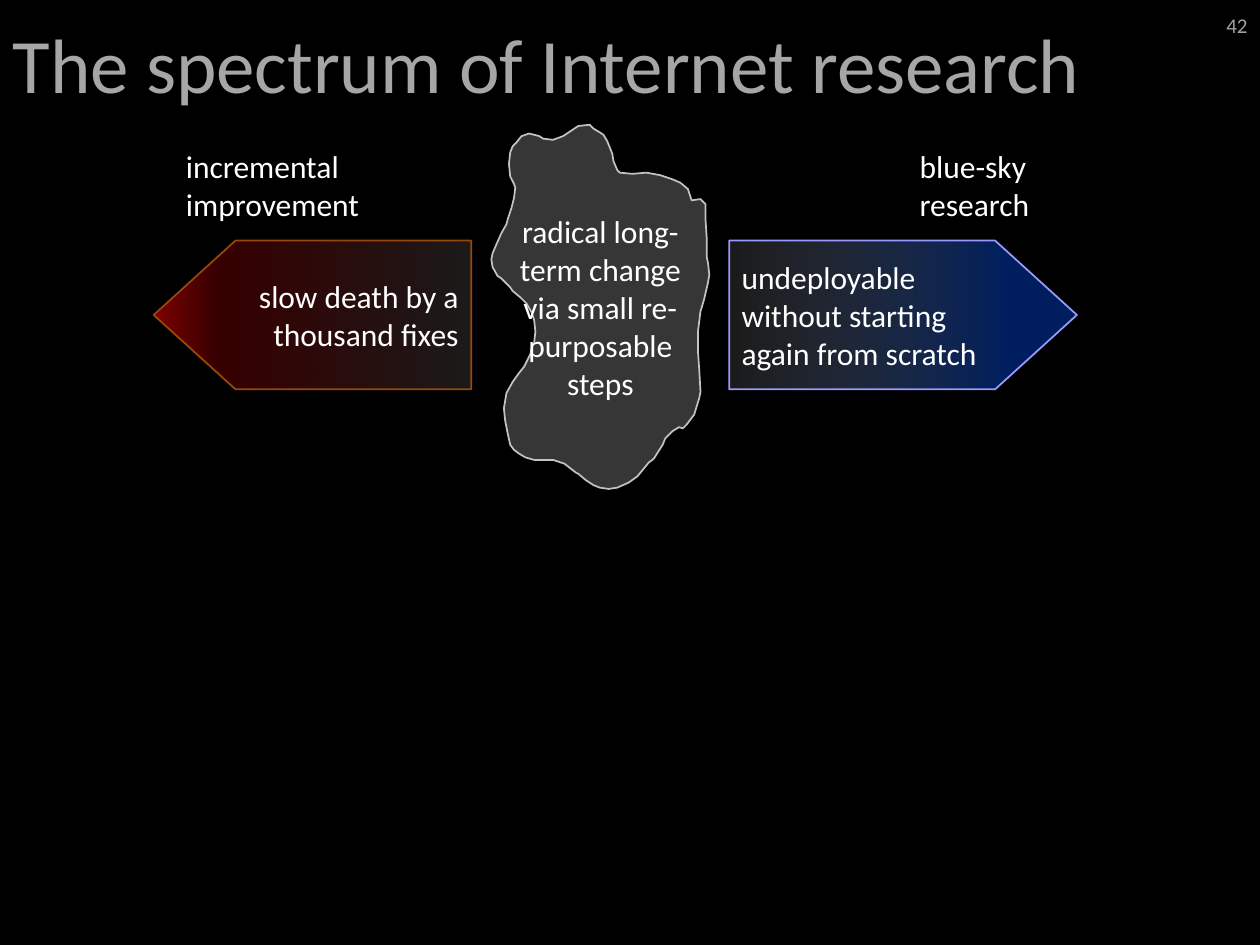
from dataclasses import dataclass

from lxml import etree
from pptx import Presentation
from pptx.dml.color import RGBColor
from pptx.enum.shapes import MSO_SHAPE
from pptx.enum.text import MSO_ANCHOR, PP_ALIGN
from pptx.oxml.ns import qn
from pptx.util import Cm, Pt

LEFT, CENTER, RIGHT = PP_ALIGN.LEFT, PP_ALIGN.CENTER, PP_ALIGN.RIGHT
TOP, MIDDLE = MSO_ANCHOR.TOP, MSO_ANCHOR.MIDDLE
RIGHT_ARROW = MSO_SHAPE.RIGHT_ARROW

FONT = "Calibri"
BLACK = RGBColor(0x00, 0x00, 0x00)
WHITE = RGBColor(0xFF, 0xFF, 0xFF)
TITLE_GREY = RGBColor(0xA6, 0xA6, 0xA6)
NUMBER_GREY = RGBColor(0xA2, 0xA2, 0xA2)
BLOB_GREY = RGBColor(0x36, 0x36, 0x36)
OUTLINE_GREY = RGBColor(0xC2, 0xC2, 0xC2)
MID_GREY = RGBColor(0x59, 0x59, 0x59)
RED = RGBColor(0xC0, 0x00, 0x00)
BROWN = RGBColor(0x98, 0x48, 0x07)
NAVY = RGBColor(0x00, 0x20, 0x60)
LAVENDER = RGBColor(0x99, 0x99, 0xFF)


@dataclass
class Stop:
    """A gradient stop; position and opacity are percentages."""
    position: int
    color: RGBColor
    opacity: int = 100


@dataclass
class Label:
    text: str
    left: float
    top: float
    width: float
    height: float
    size: int = 18
    color: RGBColor = WHITE
    align: PP_ALIGN = LEFT
    anchor: MSO_ANCHOR = TOP


@dataclass
class Arrow:
    text: str
    left: float
    width: float
    stops: list[Stop]
    line: RGBColor
    align: PP_ALIGN
    flipped: bool = False


ARROW_TOP, ARROW_HEIGHT = 4.85, 3.0
LABEL_TOP, LABEL_WIDTH, LABEL_HEIGHT = 2.84, 5.0, 1.8

LABELS = [
    Label("42", 23.29, 0, 2.11, 1.02, 12, NUMBER_GREY, RIGHT, MIDDLE),
    Label("blue-sky research", 18.29, LABEL_TOP, 3.4, LABEL_HEIGHT),
    Label("incremental improvement", 3.5, LABEL_TOP, LABEL_WIDTH, LABEL_HEIGHT),
]
ARROWS = [
    Arrow("slow death by a thousand fixes", 3.1, 6.4,
          [Stop(0, MID_GREY, 30), Stop(80, RED, 28), Stop(100, RED, 66)],
          BROWN, RIGHT, flipped=True),
    Arrow("undeployable without starting again from scratch", 14.7, 7.01,
          [Stop(0, MID_GREY, 30), Stop(80, NAVY), Stop(100, NAVY)],
          LAVENDER, LEFT),
]

BLOB_UNIT = Cm(0.0254)
BLOB_POINTS = [
    (546, 150), (540, 145), (533, 142), (524, 139), (513, 137), (502, 138),
    (492, 137), (490, 135), (487, 128), (486, 122), (484, 117), (482, 112),
    (479, 107), (476, 105), (471, 102), (468, 99), (459, 100), (453, 104),
    (447, 108), (439, 111), (431, 110), (428, 108), (420, 106), (414, 108),
    (410, 113), (407, 116), (405, 121), (404, 130), (405, 140), (408, 146),
    (409, 149), (408, 157), (406, 165), (403, 174), (402, 178), (398, 185),
    (394, 194), (391, 201), (390, 206), (391, 212), (395, 219), (398, 221),
    (405, 228), (407, 231), (413, 236), (418, 241), (422, 248), (424, 254),
    (425, 263), (424, 272), (422, 276), (421, 281), (416, 291), (412, 296),
    (407, 303), (402, 312), (400, 324), (401, 334), (403, 344), (405, 353),
    (408, 357), (412, 360), (417, 363), (424, 365), (439, 365), (448, 368),
    (457, 375), (459, 376), (465, 381), (471, 385), (476, 387), (483, 388),
    (490, 387), (499, 383), (506, 378), (515, 367), (519, 364), (524, 356),
    (526, 353), (528, 348), (534, 342), (539, 339), (542, 340), (545, 337),
    (551, 329), (555, 316), (556, 311), (555, 293), (554, 279), (554, 263),
    (556, 247), (557, 244), (559, 237), (562, 224), (563, 218), (562, 209),
    (561, 204), (561, 190), (560, 174), (560, 162), (556, 158), (549, 159),
]


def set_text(shape, text: str, size: int, color: RGBColor,
             align: PP_ALIGN, anchor: MSO_ANCHOR) -> None:
    tf = shape.text_frame
    tf.text = text
    tf.word_wrap = True
    tf.vertical_anchor = anchor
    p = tf.paragraphs[0]
    p.alignment = align
    font = p.runs[0].font
    font.name, font.size = FONT, Pt(size)
    font.color.rgb = color


def set_outline(shape, color: RGBColor) -> None:
    shape.shadow.inherit = False
    shape.line.color.rgb = color
    shape.line.width = Pt(1)


def set_gradient(shape, stops: list[Stop]) -> None:
    """Fill from left to right with any number of translucent stops."""
    shape.fill.gradient()
    shape.fill.gradient_angle = 0
    stop_list = shape._element.spPr.find(qn("a:gradFill")).find(qn("a:gsLst"))
    for old in list(stop_list):
        stop_list.remove(old)
    for stop in stops:
        gs = etree.SubElement(stop_list, qn("a:gs"), pos=str(stop.position * 1000))
        clr = etree.SubElement(gs, qn("a:srgbClr"), val=str(stop.color))
        if stop.opacity < 100:
            etree.SubElement(clr, qn("a:alpha"), val=str(stop.opacity * 1000))


def add_label(s, label: Label) -> None:
    box = s.shapes.add_textbox(Cm(label.left), Cm(label.top),
                               Cm(label.width), Cm(label.height))
    set_text(box, label.text, label.size, label.color, label.align, label.anchor)


def add_arrow(s, arrow: Arrow) -> None:
    sp = s.shapes.add_shape(RIGHT_ARROW, Cm(arrow.left), Cm(ARROW_TOP),
                            Cm(arrow.width), Cm(ARROW_HEIGHT))
    sp.adjustments[0], sp.adjustments[1] = 1.0, 0.55
    if arrow.flipped:
        sp._element.spPr.find(qn("a:xfrm")).set("flipH", "1")
    set_gradient(sp, arrow.stops)
    set_outline(sp, arrow.line)
    set_text(sp, arrow.text, 18, WHITE, arrow.align, MIDDLE)


def add_blob(s, text: str) -> None:
    builder = s.shapes.build_freeform(*BLOB_POINTS[0], scale=BLOB_UNIT)
    builder.add_line_segments(BLOB_POINTS[1:], close=True)
    sp = builder.convert_to_shape()
    sp.fill.solid()
    sp.fill.fore_color.rgb = BLOB_GREY
    set_outline(sp, OUTLINE_GREY)
    set_text(sp, text, 18, WHITE, CENTER, MIDDLE)


def main() -> None:
    prs = Presentation()
    prs.slide_width, prs.slide_height = Cm(25.4), Cm(19.05)
    s = prs.slides.add_slide(prs.slide_layouts[5])
    s.background.fill.solid()
    s.background.fill.fore_color.rgb = BLACK

    title = s.shapes.title
    title.left, title.top = Cm(0), Cm(0)
    title.width, title.height = prs.slide_width, Cm(2.51)
    set_text(title, "The spectrum of Internet research", 44, TITLE_GREY, LEFT, MIDDLE)

    for arrow in ARROWS:
        add_arrow(s, arrow)
    for label in LABELS:
        add_label(s, label)
    add_blob(s, "radical long-term change via small re-purposable steps")
    prs.save("out.pptx")


if __name__ == "__main__":
    main()
